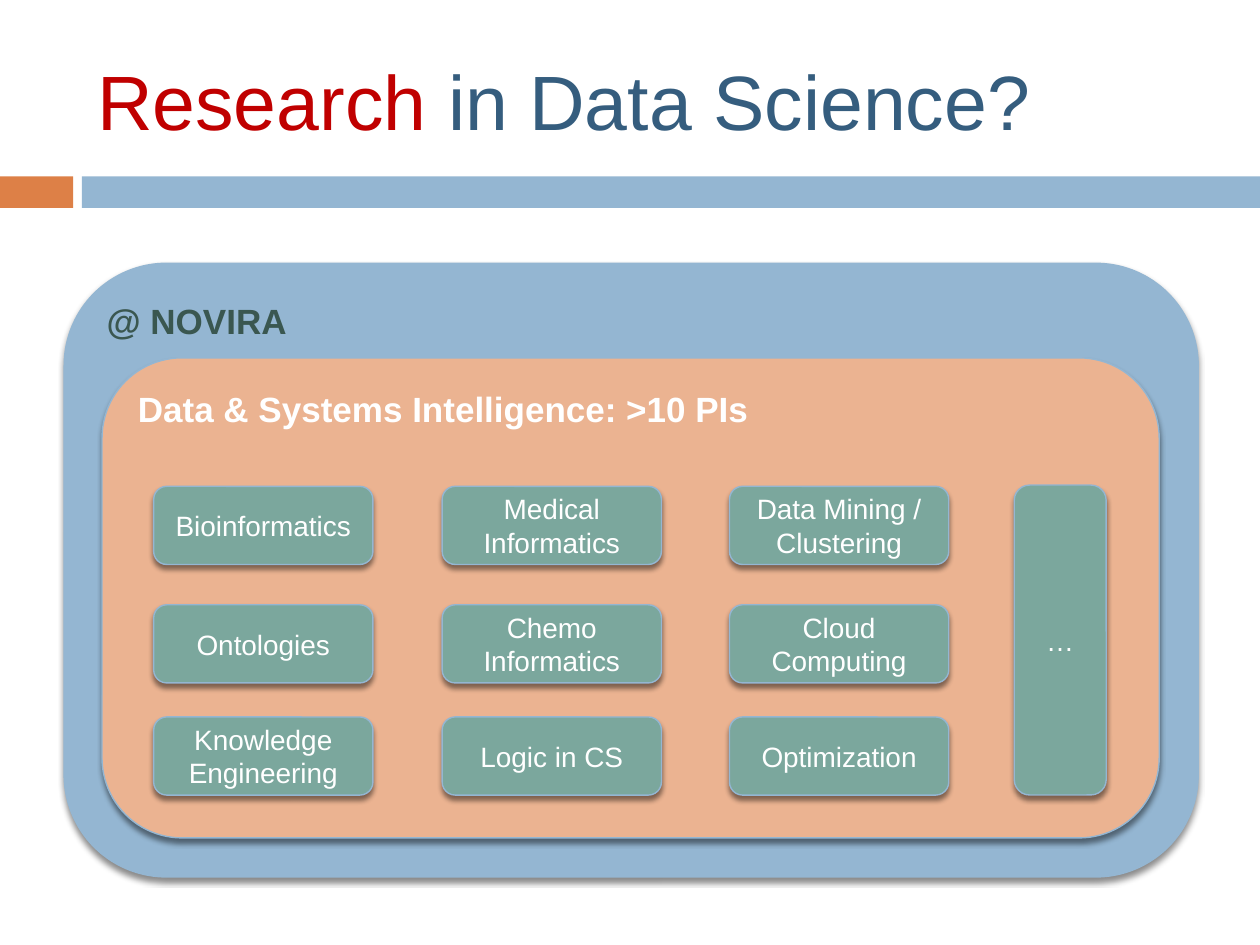
"""Build a slide that maps data science research topics inside a lab and its group."""
from lxml.etree import SubElement
from pptx import Presentation
from pptx.dml.color import RGBColor
from pptx.enum.shapes import MSO_SHAPE as Shape
from pptx.enum.text import MSO_ANCHOR as Anchor, PP_ALIGN as Align
from pptx.oxml.ns import qn
from pptx.util import Inches, Pt

COLORS = {
    "red": "C00000", "navy": "355D7E", "blue": "94B6D2", "orange": "DD8047",
    "peach": "EBB391", "green": "7BA79D", "dark green": "3A5750",
    "white": "FFFFFF", "black": "000000",
}
FONT = "Arial"
TITLE = [("Research", "red"), (" in Data Science?", "navy")]
BARS = [((0, 1.4, 0.58, 0.25), "orange"), ((0.65, 1.4, 9.35, 0.25), "blue")]
PANELS = [
    ("@ NOVIRA", (0.51, 2.09, 9, 4.87), "blue", "dark green"),
    ("Data & Systems Intelligence: >10 PIs", (0.81, 2.84, 8.39, 3.81), "peach", "white"),
]
TOPICS = [
    ["Bioinformatics", "Medical Informatics", "Data Mining / Clustering"],
    ["Ontologies", "Chemo Informatics", "Cloud Computing"],
    ["Knowledge Engineering", "Logic in CS", "Optimization"],
]
COLUMN_LEFTS = [1.22, 3.51, 5.79]
ROW_TOPS = [3.86, 4.8, 5.69]
TOPIC_SIZE = (1.74, 0.62)
MORE_TOPICS = ("…", (8.05, 3.85, 0.73, 2.46))


def color(name):
    return RGBColor.from_string(COLORS[name])


def style_run(run, size, color_name, bold=False):
    run.font.name = FONT
    run.font.size = Pt(size)
    run.font.bold = bold
    run.font.color.rgb = color(color_name)


def add_block(slide, kind, box, fill):
    shape = slide.shapes.add_shape(kind, *map(Inches, box))
    shape.shadow.inherit = False
    shape.fill.solid()
    shape.fill.fore_color.rgb = color(fill)
    shape.line.fill.background()
    return shape


def add_shadow(shape):
    effects = shape.element.spPr.find(qn("a:effectLst"))
    shadow = SubElement(effects, qn("a:outerShdw"), blurRad=str(Pt(3)),
                        dist=str(Pt(2.4)), dir="5400000", rotWithShape="0")
    shade = SubElement(shadow, qn("a:srgbClr"), val=COLORS["black"])
    SubElement(shade, qn("a:alpha"), val="45000")


def add_card(slide, text, box, fill, size, text_color, heading=False):
    shape = add_block(slide, Shape.ROUNDED_RECTANGLE, box, fill)
    shape.line.color.rgb = color("blue")
    shape.line.width = Pt(0.79)
    add_shadow(shape)
    frame = shape.text_frame
    frame.word_wrap = True
    frame.text = text
    frame.vertical_anchor = Anchor.TOP if heading else Anchor.MIDDLE
    paragraph = frame.paragraphs[0]
    paragraph.alignment = Align.LEFT if heading else Align.CENTER
    style_run(paragraph.runs[0], size, text_color, heading)


def add_title(slide):
    title = slide.shapes.title
    title.left, title.top, title.width, title.height = map(Inches, (0.67, 0.25, 8.92, 1.08))
    title.text_frame.vertical_anchor = Anchor.MIDDLE
    paragraph = title.text_frame.paragraphs[0]
    paragraph.alignment = Align.LEFT
    for text, color_name in TITLE:
        run = paragraph.add_run()
        run.text = text
        style_run(run, 44, color_name)


def main():
    presentation = Presentation()
    presentation.slide_width, presentation.slide_height = Inches(10), Inches(7.5)
    slide = presentation.slides.add_slide(presentation.slide_layouts[5])
    add_title(slide)
    for box, fill in BARS:
        add_block(slide, Shape.RECTANGLE, box, fill)
    for text, box, fill, text_color in PANELS:
        add_card(slide, text, box, fill, 20, text_color, heading=True)
    cards = [
        (text, (left, top, *TOPIC_SIZE))
        for top, row in zip(ROW_TOPS, TOPICS)
        for left, text in zip(COLUMN_LEFTS, row)
    ]
    for text, box in cards + [MORE_TOPICS]:
        add_card(slide, text, box, "green", 16, "white")
    presentation.save("out.pptx")


if __name__ == "__main__":
    main()
